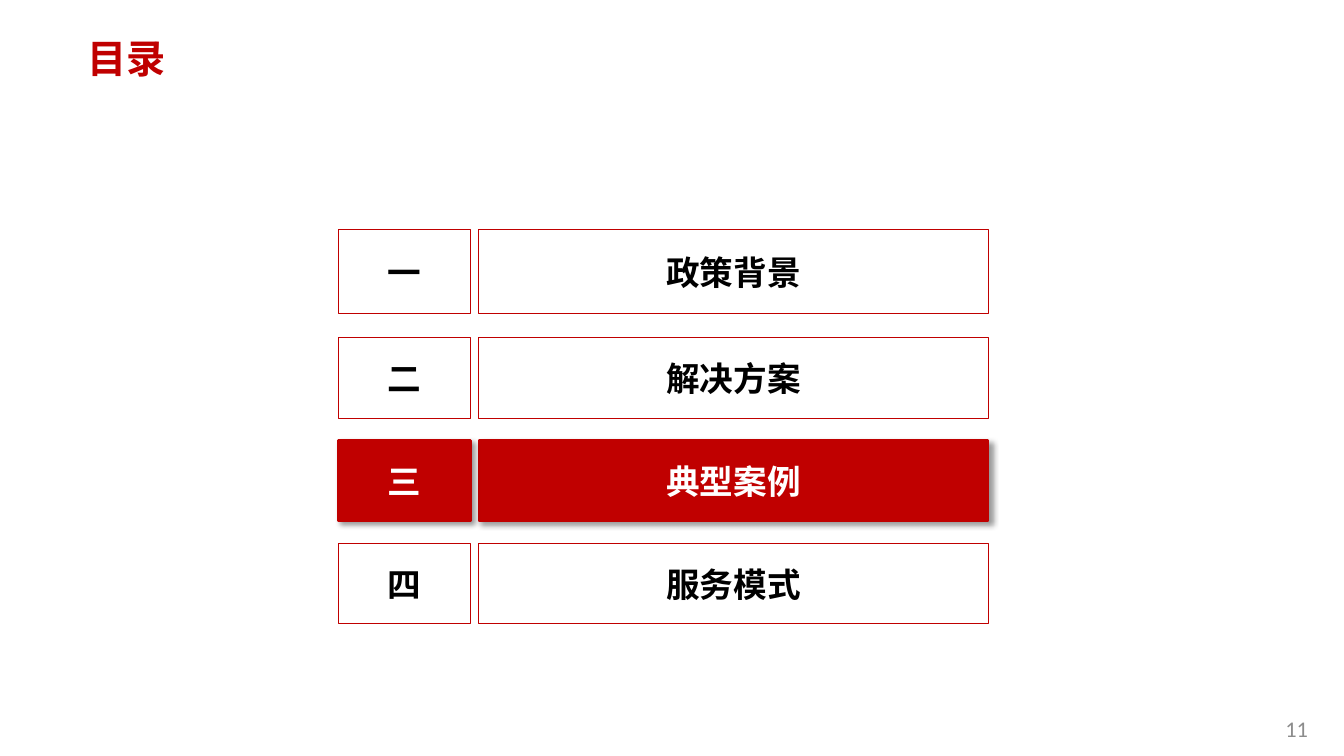
from pptx import Presentation
from pptx.dml.color import RGBColor
from pptx.enum.shapes import MSO_SHAPE
from pptx.enum.text import MSO_ANCHOR, PP_ALIGN
from pptx.oxml import parse_xml
from pptx.oxml.ns import nsdecls, qn
from pptx.util import Inches, Pt

RECTANGLE = MSO_SHAPE.RECTANGLE
MIDDLE = MSO_ANCHOR.MIDDLE
CENTER = PP_ALIGN.CENTER

RED = RGBColor(0xC0, 0x00, 0x00)
BLACK = RGBColor(0x00, 0x00, 0x00)
WHITE = RGBColor(0xFF, 0xFF, 0xFF)
GRAY = RGBColor(0x8C, 0x8C, 0x8C)

CHINESE_FONT = "Noto Sans CJK SC"
NUMBER_FONT = "Calibri"

# Agenda grid, in inches: (left, width) of columns, (top, height) of rows
NUMERAL_COLUMN = (3.36, 1.31)
TOPIC_COLUMN = (4.75, 5.05)
ROW_HEIGHT, ROW_PITCH = 0.8, 1.02
ROWS = [(2.28, 0.83)] + [(3.35 + ROW_PITCH * i, ROW_HEIGHT) for i in range(3)]

AGENDA = [("一", "政策背景"), ("二", "解决方案"), ("三", "典型案例"), ("四", "服务模式")]
CURRENT_NUMERAL = "三"


def style_text(paragraph, font_name, size, color, bold=False):
    for run in paragraph.runs:
        font = run.font
        font.name, font.size, font.bold = font_name, Pt(size), bold
        font.color.rgb = color
        latin = run._r.get_or_add_rPr().find(qn("a:latin"))
        latin.addnext(parse_xml(f'<a:ea {nsdecls("a")} typeface="{font_name}"/>'))


def add_label(slide, text, left, top, width, height, wrap, **style):
    label = slide.shapes.add_textbox(*map(Inches, (left, top, width, height)))
    frame = label.text_frame
    frame.word_wrap = wrap
    frame.text = text
    style_text(frame.paragraphs[0], **style)
    return frame


def add_drop_shadow(cell):
    cell._element.spPr.append(parse_xml(
        f'<a:effectLst {nsdecls("a")}>'
        f'<a:outerShdw blurRad="{Pt(4)}" dist="{Pt(3)}" dir="2700000" algn="tl" rotWithShape="0">'
        '<a:srgbClr val="000000"><a:alpha val="40000"/></a:srgbClr>'
        '</a:outerShdw></a:effectLst>'))


def add_agenda_cell(slide, text, column, row, current):
    (left, width), (top, height) = column, row
    cell = slide.shapes.add_shape(RECTANGLE, *map(Inches, (left, top, width, height)))
    cell.line.color.rgb = RED
    if current:
        cell.fill.solid()
        cell.fill.fore_color.rgb = RED
        cell.line.width = Pt(2)
        add_drop_shadow(cell)
    else:
        cell.fill.background()
        cell.line.width = Pt(0.75)
        cell.shadow.inherit = False

    frame = cell.text_frame
    frame.margin_left = frame.margin_right = frame.margin_top = frame.margin_bottom = 0
    frame.vertical_anchor = MIDDLE
    frame.text = text
    frame.paragraphs[0].alignment = CENTER
    style_text(frame.paragraphs[0], CHINESE_FONT, 24, WHITE if current else BLACK, bold=True)


def main():
    deck = Presentation()
    deck.slide_width, deck.slide_height = Inches(13.33), Inches(7.5)
    slide = deck.slides.add_slide(deck.slide_layouts[6])

    # Page number and heading
    add_label(slide, "11", 12.65, 7.05, 0.46, 0.37, wrap=False,
              font_name=NUMBER_FONT, size=16, color=GRAY)
    heading = add_label(slide, "目录", 0.77, 0.34, 11.28, 0.72, wrap=True,
                        font_name=CHINESE_FONT, size=28, color=RED, bold=True)
    heading.paragraphs[0].line_spacing = 0.9

    # Agenda, with the current section highlighted
    for (numeral, topic), row in zip(AGENDA, ROWS):
        current = numeral == CURRENT_NUMERAL
        add_agenda_cell(slide, topic, TOPIC_COLUMN, row, current)
        add_agenda_cell(slide, numeral, NUMERAL_COLUMN, row, current)

    deck.save("out.pptx")


if __name__ == "__main__":
    main()
